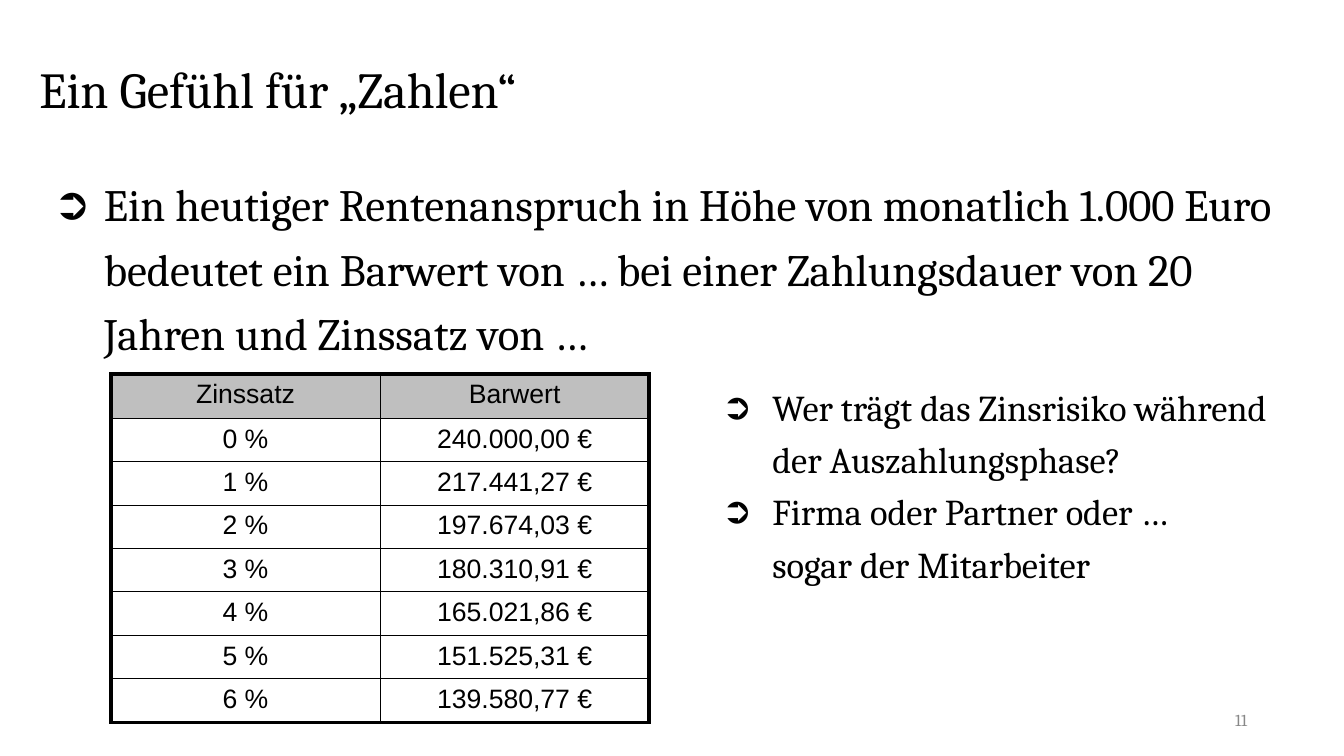
from lxml.etree import SubElement
from pptx import Presentation
from pptx.dml.color import RGBColor
from pptx.enum.text import MSO_ANCHOR, MSO_AUTO_SIZE, PP_ALIGN
from pptx.oxml.ns import qn
from pptx.util import Inches, Pt

BLACK = RGBColor(0x00, 0x00, 0x00)
HEADER_GRAY = RGBColor(0xBF, 0xBF, 0xBF)
NUMBER_GRAY = RGBColor(0x88, 0x88, 0x88)
BULLET = "➲"
THICK, THIN = 3, 0.35

ROWS = [
    ("Zinssatz", "Barwert"),
    ("0 %", "240.000,00 €"),
    ("1 %", "217.441,27 €"),
    ("2 %", "197.674,03 €"),
    ("3 %", "180.310,91 €"),
    ("4 %", "165.021,86 €"),
    ("5 %", "151.525,31 €"),
    ("6 %", "139.580,77 €"),
]


def write_text(paragraph, text, size, font="Cambria", color=BLACK,
               align=PP_ALIGN.LEFT, line_spacing=1.0):
    run = paragraph.add_run()
    run.text = text
    run.font.size = Pt(size)
    run.font.name = font
    run.font.color.rgb = color
    paragraph.alignment = align
    paragraph.line_spacing = line_spacing
    paragraph.space_before = Pt(0)


def set_bullet(paragraph, margin, hanging, bullet):
    """Set the indents in inches, and a bullet character or none."""
    properties = paragraph._p.get_or_add_pPr()
    properties.set("marL", str(Inches(margin)))
    properties.set("indent", str(Inches(-hanging)))
    if bullet:
        SubElement(properties, qn("a:buChar")).set("char", bullet)
    else:
        SubElement(properties, qn("a:buNone"))


def place_text_shape(shape, box, anchor=MSO_ANCHOR.TOP):
    """Move a text shape to its box and return its prepared text frame."""
    shape.left, shape.top, shape.width, shape.height = map(Inches, box)
    frame = shape.text_frame
    frame.word_wrap = True
    frame.auto_size = MSO_AUTO_SIZE.NONE
    frame.vertical_anchor = anchor
    frame.margin_left = frame.margin_right = Inches(0.05)
    frame.margin_top = frame.margin_bottom = Inches(0.05)
    return frame


def fill_title(title, box):
    frame = place_text_shape(title, box)
    write_text(frame.paragraphs[0], "Ein Gefühl für „Zahlen“", 36)


def fill_list(placeholder, box, items, size, margin):
    """Write (bullet, text) items, all with a half-inch hanging indent."""
    frame = place_text_shape(placeholder, box)
    for index, (bullet, text) in enumerate(items):
        paragraph = frame.add_paragraph() if index else frame.paragraphs[0]
        write_text(paragraph, text, size, line_spacing=1.2)
        set_bullet(paragraph, margin, 0.5 if bullet else 0, bullet)


def add_slide_number(slide, box):
    shape = slide.shapes.add_textbox(0, 0, 0, 0)
    frame = place_text_shape(shape, box, MSO_ANCHOR.MIDDLE)
    write_text(frame.paragraphs[0], "11", 12, color=NUMBER_GRAY,
               align=PP_ALIGN.RIGHT)


def set_borders(cell, **widths):
    """Draw black borders; widths are points by side, in order L, R, T, B."""
    properties = cell._tc.get_or_add_tcPr()
    for side, width in widths.items():
        line = SubElement(properties, qn(f"a:ln{side}"), w=str(Pt(width)))
        fill = SubElement(line, qn("a:solidFill"))
        SubElement(fill, qn("a:srgbClr")).set("val", str(BLACK))


def add_present_value_table(slide, box):
    row_count, column_count = len(ROWS), len(ROWS[0])
    table = slide.shapes.add_table(
        row_count, column_count, *map(Inches, box)).table
    table.first_row = table.horz_banding = False
    for row_index, values in enumerate(ROWS):
        is_first, is_last = row_index == 0, row_index == row_count - 1
        table.rows[row_index].height = Inches(
            0.44 if is_first or is_last else 0.43)
        for column_index, value in enumerate(values):
            cell = table.cell(row_index, column_index)
            cell.margin_left = cell.margin_right = Inches(0.06)
            cell.margin_top = cell.margin_bottom = Inches(0.06)
            write_text(cell.text_frame.paragraphs[0], value, 19,
                       font="Arial", align=PP_ALIGN.CENTER)
            set_borders(
                cell,
                L=THICK if column_index == 0 else THIN,
                R=THICK if column_index == column_count - 1 else THIN,
                T=THICK if is_first else THIN,
                B=THICK if is_last else THIN,
            )
            if is_first:
                cell.fill.solid()
                cell.fill.fore_color.rgb = HEADER_GRAY
            else:
                cell.fill.background()


def build_pension_slide(presentation):
    two_content_layout = presentation.slide_layouts[3]
    slide = presentation.slides.add_slide(two_content_layout)
    title, statement, questions = list(slide.placeholders)[:3]
    fill_title(title, (0.34, 0.53, 11.84, 0.67))
    add_slide_number(slide, (9.42, 7, 3, 0.29))
    fill_list(statement, (0.48, 1.6, 12.38, 3.42), [
        (BULLET, "Ein heutiger Rentenanspruch in Höhe von monatlich "
                 "1.000 Euro bedeutet ein Barwert von … bei einer "
                 "Zahlungsdauer von 20 Jahren und Zinssatz von …"),
    ], size=32, margin=0.5)
    add_present_value_table(slide, (1.1, 3.71, 5.34, 3.46))
    fill_list(questions, (6.61, 3.68, 6.42, 2.02), [
        (BULLET, "Wer trägt das Zinsrisiko während der Auszahlungsphase?"),
        (BULLET, "Firma oder Partner oder …"),
        (None, "sogar der Mitarbeiter"),
    ], size=26, margin=1)


def main():
    presentation = Presentation()
    presentation.slide_width = Inches(13.33)
    presentation.slide_height = Inches(7.5)
    build_pension_slide(presentation)
    presentation.save("out.pptx")


if __name__ == "__main__":
    main()
